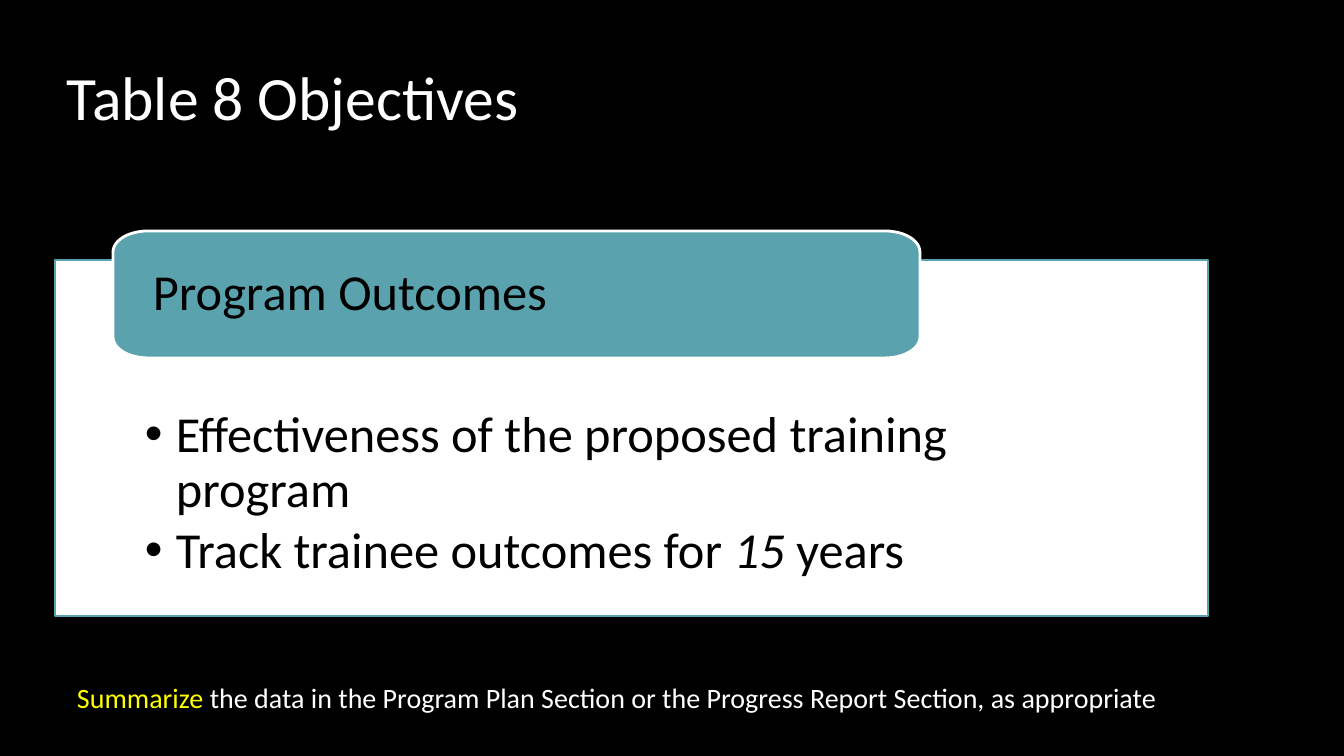
from math import cos, pi, sin

from lxml.etree import SubElement
from pptx import Presentation
from pptx.dml.color import RGBColor
from pptx.enum.shapes import MSO_SHAPE
from pptx.enum.text import MSO_ANCHOR, PP_ALIGN
from pptx.oxml.ns import qn
from pptx.util import Pt

PX = 914400 / 100.8
FONT = "Calibri"
BLACK = RGBColor(0x00, 0x00, 0x00)
WHITE = RGBColor(0xFF, 0xFF, 0xFF)
TEAL = RGBColor(0x5A, 0xA2, 0xAE)
YELLOW = RGBColor(0xFF, 0xFF, 0x00)


def px(length):
    return round(length * PX)


def style_shape(shape, fill, line):
    shape.shadow.inherit = False
    shape.fill.solid()
    shape.fill.fore_color.rgb = fill
    shape.line.color.rgb = line
    shape.line.width = Pt(2)


def set_frame(box, insets, anchor):
    frame = box.text_frame
    frame.word_wrap = True
    frame.vertical_anchor = anchor
    left, top, right, bottom = (px(inset) for inset in insets)
    frame.margin_left, frame.margin_top = left, top
    frame.margin_right, frame.margin_bottom = right, bottom
    return frame


def add_span(para, text, size, color, italic=False):
    span = para.add_run()
    span.text = text
    span.font.name = FONT
    span.font.size = Pt(size)
    span.font.color.rgb = color
    span.font.italic = italic


def add_bullet(para, indent):
    properties = para._p.get_or_add_pPr()
    properties.set("marL", str(px(indent)))
    properties.set("indent", str(-px(indent)))
    SubElement(properties, qn("a:buFont"), typeface="Arial")
    SubElement(properties, qn("a:buChar"), char="•")


def add_text(page, place, insets, anchor, spans, size, spacing=None):
    box = page.shapes.add_textbox(*(px(length) for length in place))
    para = set_frame(box, insets, anchor).paragraphs[0]
    para.line_spacing = spacing
    for text, color in spans:
        add_span(para, text, size, color)


def add_panel(page, place, insets, items):
    panel = page.shapes.add_shape(MSO_SHAPE.RECTANGLE, *(px(length) for length in place))
    style_shape(panel, WHITE, TEAL)
    frame = set_frame(panel, insets, MSO_ANCHOR.TOP)
    for index, item in enumerate(items):
        para = frame.add_paragraph() if index else frame.paragraphs[0]
        para.alignment = PP_ALIGN.LEFT
        para.line_spacing = 0.9
        para.space_after = Pt(5)
        add_bullet(para, 31)
        for text, italic in item:
            add_span(para, text, 36, BLACK, italic)


def rounded_outline(left, top, width, height, radius_x, radius_y, steps=12):
    right, bottom = left + width, top + height
    centers = [
        (right - radius_x, bottom - radius_y),
        (left + radius_x, bottom - radius_y),
        (left + radius_x, top + radius_y),
        (right - radius_x, top + radius_y),
    ]
    return [
        (px(x + radius_x * cos(angle)), px(y + radius_y * sin(angle)))
        for corner, (x, y) in enumerate(centers)
        for angle in ((corner + step / steps) * pi / 2 for step in range(steps + 1))
    ]


def add_tab(page, place, insets, text):
    start, *points = rounded_outline(*place, 35, 21)
    builder = page.shapes.build_freeform(*start)
    builder.add_line_segments(points, close=True)
    tab = builder.convert_to_shape()
    style_shape(tab, TEAL, WHITE)
    para = set_frame(tab, insets, MSO_ANCHOR.MIDDLE).paragraphs[0]
    para.alignment = PP_ALIGN.LEFT
    para.line_spacing = 0.9
    add_span(para, text, 36, BLACK)


def main():
    deck = Presentation()
    deck.slide_width, deck.slide_height = px(1344), px(756)
    page = deck.slides.add_slide(deck.slide_layouts[6])
    page.background.fill.solid()
    page.background.fill.fore_color.rgb = BLACK

    add_text(page, (67, 27, 1210, 106), (0, 0, 0, 0), MSO_ANCHOR.BOTTOM,
             [("Table 8 Objectives", WHITE)], 44, Pt(28))
    add_text(page, (67, 675, 1210, 44), (10, 5, 10, 5), MSO_ANCHOR.TOP,
             [("Summarize", YELLOW),
              (" the data in the Program Plan Section or the Progress Report Section,"
               " as appropriate", WHITE)], 20)
    add_panel(page, (55, 260, 1153, 356), (90, 149, 90, 28), [
        [("Effectiveness of the proposed training program", False)],
        [("Track trainee outcomes for ", False), ("15", True), (" years", False)],
    ])
    add_tab(page, (113, 231, 807, 127), (40, 10, 40, 10), "Program Outcomes")
    deck.save("out.pptx")


if __name__ == "__main__":
    main()
